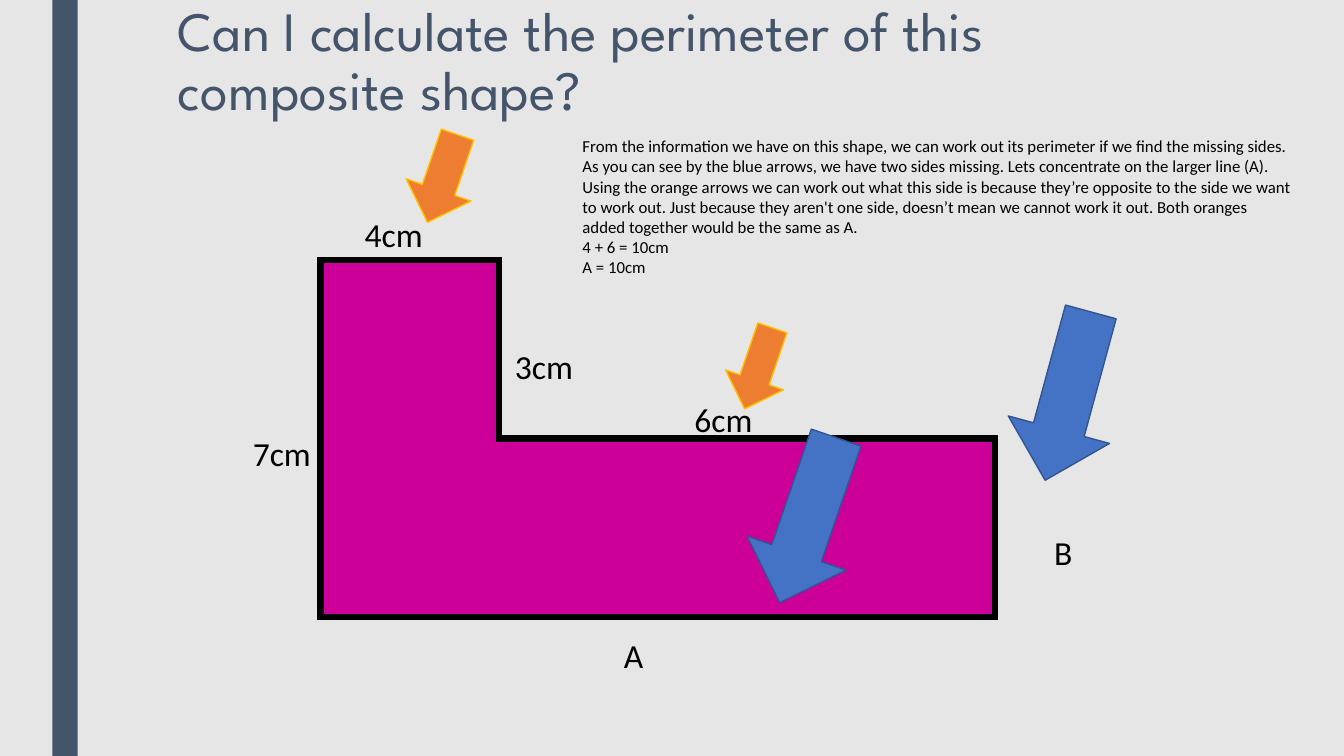
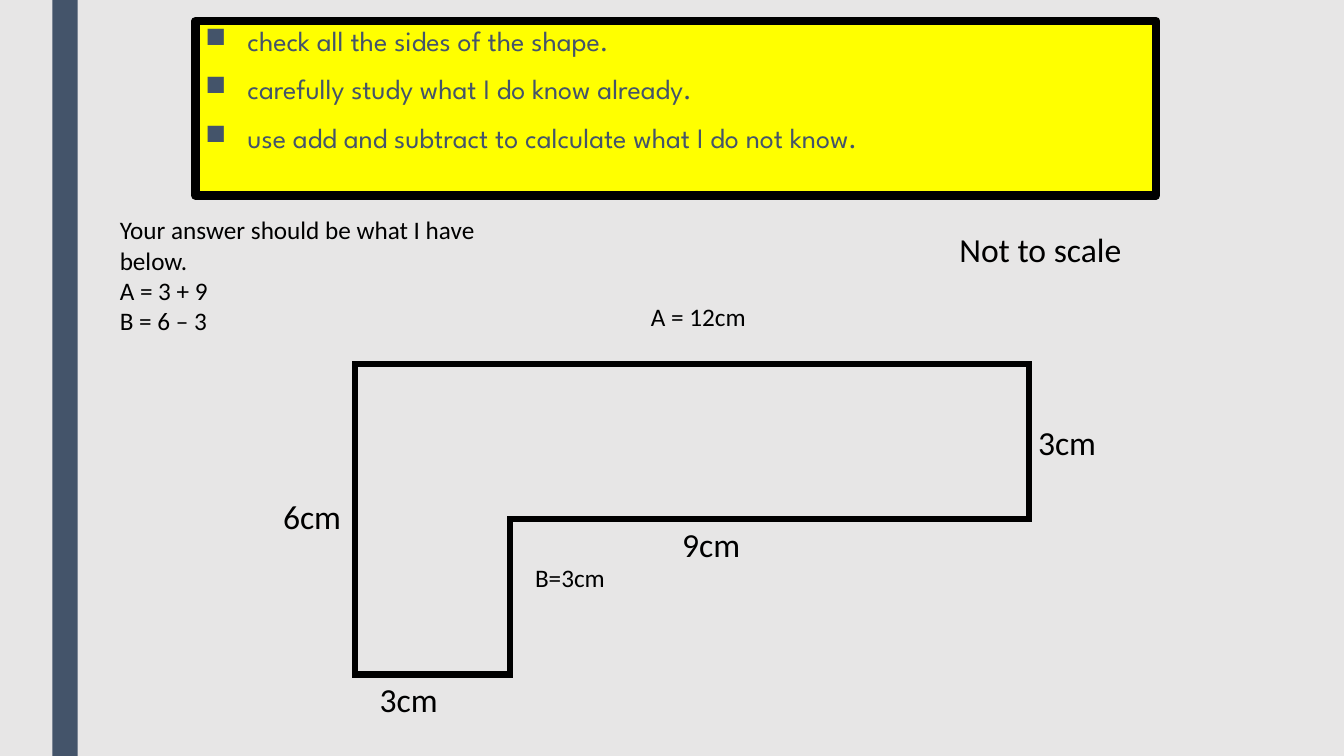
from dataclasses import dataclass

from lxml.etree import SubElement
from pptx import Presentation
from pptx.dml.color import RGBColor
from pptx.enum.shapes import MSO_SHAPE
from pptx.enum.text import MSO_ANCHOR
from pptx.oxml.ns import qn
from pptx.shapes.autoshape import Shape
from pptx.slide import Slide
from pptx.text.text import TextFrame
from pptx.util import Pt


@dataclass(frozen=True)
class Theme:
    background: str = "E7E6E6"
    slate: str = "44546A"
    ink: str = "000000"
    magenta: str = "CC0099"
    yellow: str = "FFFF00"
    blue: str = "4472C4"
    blue_edge: str = "325491"
    orange: str = "ED7D31"
    orange_edge: str = "FFC000"
    heading_font: str = "League Spartan"
    body_font: str = "Calibri"
    title_size: float = 39.6
    bullet_size: float = 20
    label_size: float = 24
    answer_size: float = 18
    note_size: float = 12


THEME = Theme()


@dataclass(frozen=True)
class Box:
    left: float
    top: float
    width: float
    height: float

    def lengths(self) -> tuple[Pt, Pt, Pt, Pt]:
        return Pt(self.left), Pt(self.top), Pt(self.width), Pt(self.height)


@dataclass(frozen=True)
class Label:
    text: str
    left: float
    top: float
    size: float = THEME.label_size
    width: float = 139
    height: float = 36


@dataclass(frozen=True)
class Arrow:
    box: Box
    rotation: float
    fill: str
    edge: str


BAND = Box(37.44, 0, 18, 540)

EXPLANATION = (
    "From the information we have on this shape, we can work out its perimeter if we find "
    "the missing sides. As you can see by the blue arrows, we have two sides missing. Lets "
    "concentrate on the larger line (A). Using the orange arrows we can work out what this "
    "side is because they’re opposite to the side we want to work out. Just because they "
    "aren't one side, doesn’t mean we cannot work it out. Both oranges added together would "
    "be the same as A.",
    "4 + 6 = 10cm",
    "A = 10cm",
)

QUESTION_LABELS = (
    Label("4cm", 253.4, 149),
    Label("7cm", 173.5, 306),
    Label("3cm", 360.7, 243.4),
    Label("6cm", 488.9, 281.5),
    Label("A", 438.5, 450),
    Label("B", 745.9, 376.6),
)

ARROWS = (
    Arrow(Box(700.6, 245.5, 124.6, 74.9), 285.2, THEME.blue, THEME.blue_edge),
    Arrow(Box(514.8, 334.1, 124.6, 74.9), 288.9, THEME.blue, THEME.blue_edge),
    Arrow(Box(283, 103, 66.2, 49), 288.9, THEME.orange, THEME.orange_edge),
    Arrow(Box(511.2, 241.2, 61.2, 43.9), 288.9, THEME.orange, THEME.orange_edge),
)

STEPS = (
    "check all the sides of the shape.",
    "carefully study what I do know already.",
    "use add and subtract to calculate what I do not know.",
)

ANSWER_LABELS = (
    Label("Not to scale", 678.2, 159.8),
    Label("3cm", 264.2, 481.7),
    Label("6cm", 195.1, 350.6),
    Label("9cm", 480.2, 370.8),
    Label("3cm", 734.4, 298.1),
    Label("B=3cm", 375.1, 398.2, THEME.answer_size, 72, 29),
    Label("A = 12cm", 457.9, 211.7, THEME.answer_size, 91, 29),
)

WORKING = ("Your answer should be what I have below.", "A = 3 + 9", "B = 6 – 3")


def color(value: str) -> RGBColor:
    return RGBColor.from_string(value)


def write(frame: TextFrame, lines: tuple[str, ...], size: float,
          font: str = THEME.body_font, ink: str = THEME.ink) -> None:
    frame.word_wrap = True
    frame.vertical_anchor = MSO_ANCHOR.TOP
    frame.text = "\n".join(lines)
    for paragraph in frame.paragraphs:
        paragraph.font.name = font
        paragraph.font.size = Pt(size)
        paragraph.font.color.rgb = color(ink)


def add_text(slide: Slide, box: Box, lines: tuple[str, ...], size: float) -> None:
    write(slide.shapes.add_textbox(*box.lengths()).text_frame, lines, size)


def add_labels(slide: Slide, labels: tuple[Label, ...]) -> None:
    for label in labels:
        box = Box(label.left, label.top, label.width, label.height)
        add_text(slide, box, (label.text,), label.size)


def add_preset(slide: Slide, kind: MSO_SHAPE, box: Box, fill: str | None,
               edge: str | None = None, weight: float = 1) -> Shape:
    shape = slide.shapes.add_shape(kind, *box.lengths())
    shape.shadow.inherit = False
    if fill:
        shape.fill.solid()
        shape.fill.fore_color.rgb = color(fill)
    else:
        shape.fill.background()
    if edge:
        shape.line.color.rgb = color(edge)
        shape.line.width = Pt(weight)
    else:
        shape.line.fill.background()
    return shape


def add_composite(slide: Slide, box: Box, fill: str | None, flipped: bool = False) -> None:
    """Draw the thick L-shaped outline with sharp corners."""
    shape = add_preset(slide, MSO_SHAPE.CORNER, box, fill, THEME.ink, 4.5)
    properties = shape.element.spPr
    SubElement(properties.find(qn("a:ln")), qn("a:miter")).set("lim", "800000")
    if flipped:
        properties.find(qn("a:xfrm")).set("flipV", "1")


def add_title(slide: Slide, text: str) -> None:
    frame = slide.shapes.add_textbox(*Box(120, 0, 720, 90).lengths()).text_frame
    write(frame, (text,), THEME.title_size, THEME.heading_font, THEME.slate)
    frame.vertical_anchor = MSO_ANCHOR.MIDDLE
    frame.paragraphs[0].line_spacing = 0.89


def add_steps(slide: Slide, box: Box, steps: tuple[str, ...]) -> None:
    panel = add_preset(slide, MSO_SHAPE.RECTANGLE, box, THEME.yellow, THEME.ink, 6)
    SubElement(panel.element.spPr.find(qn("a:ln")), qn("a:round"))
    write(panel.text_frame, steps, THEME.bullet_size, THEME.heading_font, THEME.slate)
    indent = Pt(30)
    for paragraph in panel.text_frame.paragraphs:
        paragraph.line_spacing = 0.94
        paragraph.space_before = Pt(10)
        paragraph.space_after = Pt(2)
        properties = paragraph._p.get_or_add_pPr()
        properties.set("algn", "l")
        properties.set("marL", str(indent))
        properties.set("indent", str(-indent))
        bullet = properties.makeelement(qn("a:buChar"), {"char": "■"})
        properties.find(qn("a:defRPr")).addprevious(bullet)


def new_slide(presentation: Presentation) -> Slide:
    slide = presentation.slides.add_slide(presentation.slide_layouts[6])
    add_preset(slide, MSO_SHAPE.RECTANGLE, BAND, THEME.slate)
    return slide


def build_question(presentation: Presentation) -> None:
    slide = new_slide(presentation)
    add_title(slide, "Can I calculate the perimeter of this composite shape?")
    add_composite(slide, Box(229, 185.8, 481.7, 254.9), THEME.magenta)
    add_text(slide, Box(409, 93.6, 522.7, 128.2), EXPLANATION, THEME.note_size)
    add_labels(slide, QUESTION_LABELS)
    for arrow in ARROWS:
        shape = add_preset(slide, MSO_SHAPE.LEFT_ARROW, arrow.box, arrow.fill, arrow.edge)
        shape.rotation = arrow.rotation


def build_answer(presentation: Presentation) -> None:
    slide = new_slide(presentation)
    add_steps(slide, Box(139.7, 15.1, 686.2, 124.6), STEPS)
    add_composite(slide, Box(253.4, 259.9, 481.7, 221.8), None, flipped=True)
    add_labels(slide, ANSWER_LABELS)
    add_text(slide, Box(78.5, 149.8, 283, 94.3), WORKING, THEME.answer_size)


def main() -> None:
    presentation = Presentation()
    presentation.slide_width = Pt(960)
    presentation.slide_height = Pt(540)
    background = presentation.slide_master.background.fill
    background.solid()
    background.fore_color.rgb = color(THEME.background)
    build_question(presentation)
    build_answer(presentation)
    presentation.save("out.pptx")


if __name__ == "__main__":
    main()
